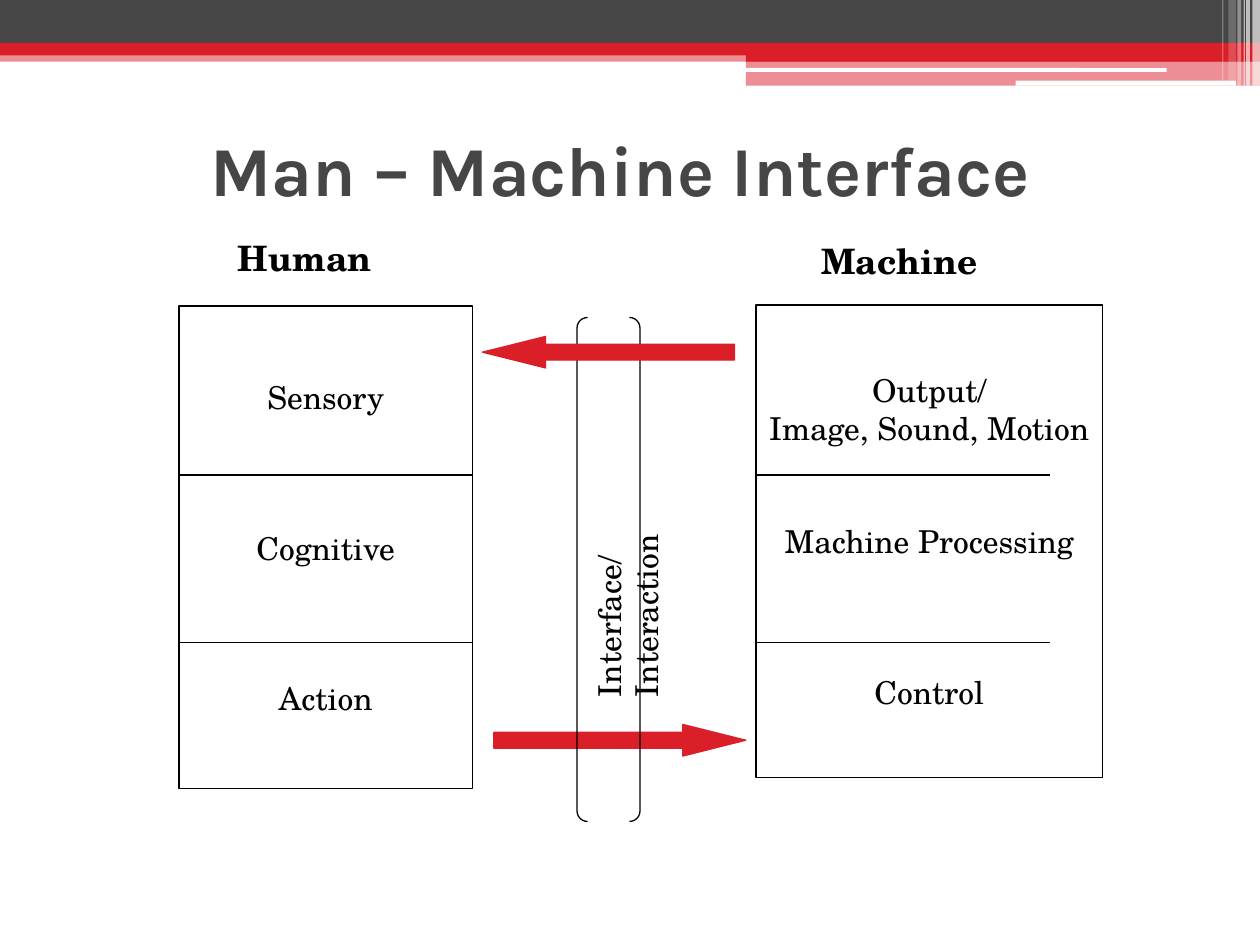
from lxml import etree
from pptx import Presentation
from pptx.dml.color import RGBColor
from pptx.enum.shapes import MSO_CONNECTOR, MSO_SHAPE
from pptx.enum.text import MSO_ANCHOR, PP_ALIGN
from pptx.oxml.ns import qn
from pptx.util import Inches, Pt

RECT = MSO_SHAPE.RECTANGLE
ROUNDED = MSO_SHAPE.ROUNDED_RECTANGLE
BRACKETS = MSO_SHAPE.DOUBLE_BRACKET
LEFT_ARROW = MSO_SHAPE.LEFT_ARROW
RIGHT_ARROW = MSO_SHAPE.RIGHT_ARROW
STRAIGHT = MSO_CONNECTOR.STRAIGHT
MIDDLE = MSO_ANCHOR.MIDDLE
TOP = MSO_ANCHOR.TOP
CENTER = PP_ALIGN.CENTER
LEFT = PP_ALIGN.LEFT

RED = RGBColor(0xDA, 0x1F, 0x28)
GRAY = RGBColor(0x46, 0x46, 0x46)
WHITE = RGBColor(0xFF, 0xFF, 0xFF)
BLACK = RGBColor(0, 0, 0)

TITLE_FONT = "Karla"
BODY_FONT = "TeX Gyre Schola"
LINE_PITCH = 21.55  # height in points of one 18 pt line
DIVIDERS = (3.77, 5.1)


def add_block(slide, kind, box, fill=None, line=None, opacity=100):
    block = slide.shapes.add_shape(kind, *map(Inches, box))
    block.shadow.inherit = False
    if fill is None:
        block.fill.background()
    else:
        block.fill.solid()
        block.fill.fore_color.rgb = fill
        if opacity < 100:
            color = block.fill._xPr.find(qn("a:solidFill"))[0]
            etree.SubElement(color, qn("a:alpha"), val=str(opacity * 1000))
    if line is None:
        block.line.fill.background()
    else:
        block.line.color.rgb = line
        block.line.width = Pt(0.75)
    return block


def add_run(paragraph, text, size, font=BODY_FONT, color=BLACK, bold=False):
    run = paragraph.add_run()
    run.text = text
    run.font.size = Pt(size)
    run.font.name = font
    run.font.color.rgb = color
    run.font.bold = bold


def add_label(slide, box, lines, size, align=LEFT, anchor=TOP, **style):
    label = slide.shapes.add_textbox(*map(Inches, box))
    frame = label.text_frame
    frame.word_wrap = False
    frame.vertical_anchor = anchor
    paragraph = frame.paragraphs[0]
    paragraph.alignment = align
    for number, line in enumerate(lines):
        if number:
            paragraph.add_line_break()
        add_run(paragraph, line, size, **style)
    return label


def add_header(slide, box):
    left, top, width, height = box
    right = left + width
    split = left + 5.92

    # Full-width bands and the stepped bands on the right
    for x, y, band_height, color, opacity in (
        (left, 0.4, 0.09, RED, 50),
        (left, 0, 0.34, GRAY, 100),
        (left, 0.34, 0.1, RED, 100),
        (split, 0.39, 0.1, RED, 100),
        (split, 0.48, 0.2, RED, 50),
    ):
        add_block(slide, RECT, (x, top + y, right - x, band_height),
                  color, opacity=opacity)

    # White slits
    for x, y, slit_width, slit_height in ((5.91, 0.54, 3.35, 0.03),
                                          (8.06, 0.64, 1.75, 0.04)):
        add_block(slide, ROUNDED,
                  (left + x, top + y, slit_width, slit_height), WHITE)

    # Pale vertical stripes, by distance from the right edge
    for offset, stripe_width, stripe_height, opacity in (
        (0.06, 0.06, height, 65),
        (0.11, 0.03, height, 65),
        (0.13, 0.01, height, 60),
        (0.18, 0.03, height, 40),
        (0.25, 0.06, 0.64, 20),
        (0.3, 0.01, 0.64, 30),
    ):
        add_block(slide, RECT,
                  (right - offset, top, stripe_width, stripe_height),
                  WHITE, opacity=opacity)


def add_column(slide, box, heading, heading_box, stages):
    """Stages are (text, number of lines left free above it)."""
    add_label(slide, heading_box, [heading], 20, bold=True)
    frame = add_block(slide, RECT, box, line=BLACK).text_frame
    frame.word_wrap = False
    frame.vertical_anchor = MIDDLE
    for number, (text, free_lines) in enumerate(stages):
        paragraph = frame.add_paragraph() if number else frame.paragraphs[0]
        paragraph.alignment = CENTER
        paragraph.space_before = Pt(free_lines * LINE_PITCH)
        add_run(paragraph, text, 18)


def add_dividers(slide, left, width):
    for y in DIVIDERS:
        divider = slide.shapes.add_connector(
            STRAIGHT, Inches(left), Inches(y), Inches(left + width), Inches(y))
        divider.line.color.rgb = BLACK
        divider.line.width = Pt(0.75)
        etree.SubElement(divider._element.spPr, qn("a:effectLst"))


def add_flow_arrow(slide, kind, box):
    arrow = add_block(slide, kind, box, RED, RED)
    arrow.adjustments[0] = 0.5
    arrow.adjustments[1] = 2


def add_interface(slide, box):
    left, top, width, height = box
    add_flow_arrow(slide, RIGHT_ARROW, (left - 0.66, top + 3.23, 2, 0.25))
    brackets = add_block(slide, BRACKETS, box, line=BLACK)
    brackets.adjustments[0] = 0.167
    caption = add_label(slide, (left - 0.89, top + 1.47, 2.58, 0.7),
                        ["Interface/", "Interaction"], 18)
    caption.rotation = 270
    add_flow_arrow(slide, LEFT_ARROW, (left - 0.75, top + 0.15, 2, 0.25))


def main():
    deck = Presentation()
    deck.slide_width = Inches(10)
    deck.slide_height = Inches(7.5)
    slide = deck.slides.add_slide(deck.slide_layouts[6])

    add_header(slide, (0, 0, 10, 0.68))
    add_label(slide, (0.42, 0.75, 9, 1.17), ["Man – Machine Interface"], 40,
              CENTER, MIDDLE, font=TITLE_FONT, color=GRAY, bold=True)

    # Human and machine sides
    add_column(slide, (1.42, 2.43, 2.33, 3.83),
               "Human", (1.79, 1.83, 1.29, 0.44),
               [("Sensory", 0), ("Cognitive", 3), ("Action", 3)])
    add_column(slide, (6, 2.42, 2.75, 3.75),
               "Machine", (6.42, 1.85, 1.45, 0.44),
               [("Output/", 0), ("Image, Sound, Motion", 0),
                ("Machine Processing", 2), ("Control", 3)])
    for left in (1.42, 6):
        add_dividers(slide, left, 2.33)

    # Interface between them
    add_interface(slide, (4.58, 2.52, 0.5, 4))

    deck.save("out.pptx")


if __name__ == "__main__":
    main()
